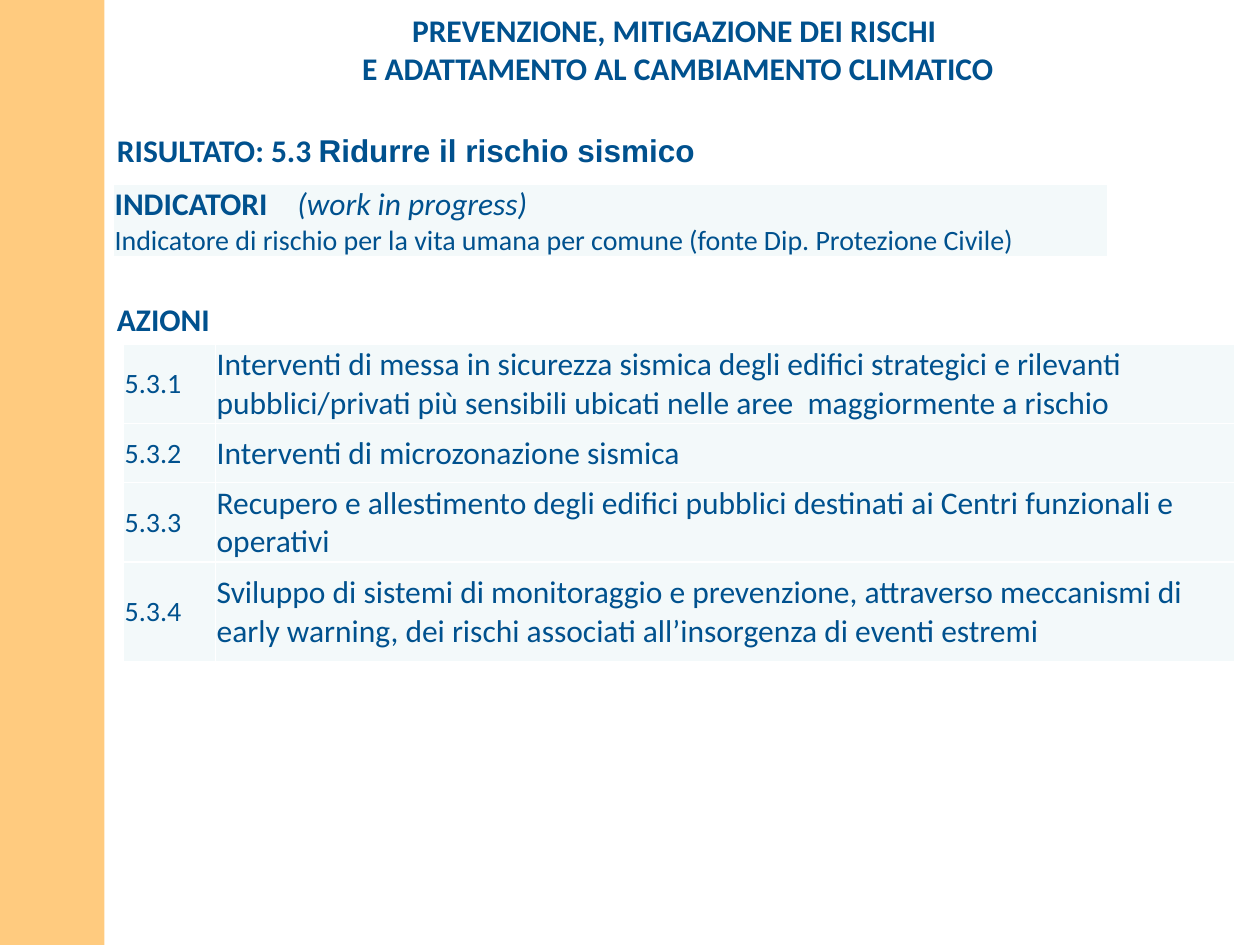
from pptx import Presentation
from pptx.dml.color import RGBColor
from pptx.enum.shapes import MSO_SHAPE
from pptx.enum.text import MSO_ANCHOR as ANCHOR, MSO_AUTO_SIZE as AUTO, PP_ALIGN as ALIGN
from pptx.oxml.ns import qn
from pptx.util import Inches, Pt
from lxml import etree

BLUE = RGBColor(0x00, 0x51, 0x8E)
ORANGE = RGBColor(0xFF, 0x99, 0x00)
PALE = RGBColor(0xF3, 0xF9, 0xFA)
WHITE = RGBColor(0xFF, 0xFF, 0xFF)

TITLE = ["PREVENZIONE, MITIGAZIONE DEI RISCHI ",
         "E ADATTAMENTO AL CAMBIAMENTO CLIMATICO"]
INDICATOR = "Indicatore di rischio per la vita umana per comune (fonte Dip. Protezione Civile)"
ACTIONS = [
    ("5.3.1", "Interventi di messa in sicurezza sismica degli edifici strategici e rilevanti "
              "pubblici/privati più sensibili ubicati nelle aree  maggiormente a rischio"),
    ("5.3.2", "Interventi di microzonazione sismica"),
    ("5.3.3", "Recupero e allestimento degli edifici pubblici destinati ai Centri funzionali "
              "e operativi"),
    ("5.3.4", "Sviluppo di sistemi di monitoraggio e prevenzione, attraverso meccanismi di "
              "early warning, dei rischi associati all’insorgenza di eventi estremi"),
]


class SlideBuilder:
    font = "Calibri"
    color = BLUE

    def __init__(self, slide):
        self.slide = slide

    def style(self, font, size=18, bold=False, name=None):
        font.name = name or self.font
        font.size = Pt(size)
        font.bold = bold
        font.color.rgb = self.color

    def bar(self, x, y, w, h, color, alpha):
        sp = self.slide.shapes.add_shape(
            MSO_SHAPE.RECTANGLE, Inches(x), Inches(y), Inches(w), Inches(h))
        sp.shadow.inherit = False
        sp.fill.solid()
        sp.fill.fore_color.rgb = color
        sp.line.fill.background()
        clr = sp.fill._xPr.find(qn("a:solidFill"))[0]
        etree.SubElement(clr, qn("a:alpha")).set("val", str(alpha * 1000))

    def title(self, x, y, w, h, lines):
        sp = self.slide.shapes.title
        sp.left, sp.top, sp.width, sp.height = map(Inches, (x, y, w, h))
        sp.fill.solid()
        sp.fill.fore_color.rgb = WHITE
        tf = sp.text_frame
        tf.auto_size = AUTO.NONE
        tf.vertical_anchor = ANCHOR.MIDDLE
        tf.margin_left = tf.margin_right = tf.margin_top = tf.margin_bottom = 0
        tf.text = "\n".join(lines)
        for p in tf.paragraphs:
            p.alignment = ALIGN.CENTER
            self.style(p.font, bold=True)

    def heading(self, x, y, w, h, *runs):
        """Each run is a (text, font name) pair."""
        tf = self.slide.shapes.add_textbox(
            Inches(x), Inches(y), Inches(w), Inches(h)).text_frame
        tf.word_wrap = True
        tf.auto_size = AUTO.SHAPE_TO_FIT_TEXT
        for text, name in runs:
            r = tf.paragraphs[0].add_run()
            r.text = text
            self.style(r.font, bold=True, name=name)

    def table(self, x, y, widths, heights):
        frame = self.slide.shapes.add_table(
            len(heights), len(widths), Inches(x), Inches(y),
            Inches(sum(widths)), Inches(sum(heights)))
        table = frame.table
        table.first_row = table.horz_banding = False
        for col, w in zip(table.columns, widths):
            col.width = Inches(w)
        for row, h in zip(table.rows, heights):
            row.height = Inches(h)
        for cell in table.iter_cells():
            self.format_cell(cell)
        return table

    def format_cell(self, cell):
        cell.vertical_anchor = ANCHOR.MIDDLE
        cell.margin_left = cell.margin_right = cell.margin_top = Inches(0.01)
        cell.margin_bottom = 0
        tc_pr = cell._tc.get_or_add_tcPr()
        for side in ("lnL", "lnR", "lnT", "lnB"):
            ln = etree.SubElement(tc_pr, qn("a:" + side), w=str(Pt(1)))
            fill = etree.SubElement(ln, qn("a:solidFill"))
            etree.SubElement(fill, qn("a:srgbClr"), val=str(WHITE))
        cell.fill.solid()
        cell.fill.fore_color.rgb = PALE

    def tab_stop(self, p, pos):
        tabs = etree.SubElement(p._p.get_or_add_pPr(), qn("a:tabLst"))
        etree.SubElement(tabs, qn("a:tab"), pos=str(Inches(pos)), algn="l")


def main():
    prs = Presentation()
    prs.slide_width, prs.slide_height = Inches(10), Inches(7.5)
    s = SlideBuilder(prs.slides.add_slide(prs.slide_layouts[5]))

    # Side bar and title
    s.bar(0, 0, 0.83, 7.5, ORANGE, 50)
    s.title(0.83, 0.05, 9.1, 0.67, TITLE)

    # Expected result
    s.heading(0.83, 0.99, 9.06, 0.4,
              ("RISULTATO: 5.3 ", "Calibri"), ("Ridurre il rischio sismico", "Arial"))

    # Indicators
    tf = s.table(0.9, 1.46, [7.89], [0.58]).cell(0, 0).text_frame
    p = tf.paragraphs[0]
    s.tab_stop(p, 1.45)
    for text, is_label in (("INDICATORI\t", True), ("(work in progress)", False)):
        r = p.add_run()
        r.text = text
        s.style(r.font, bold=is_label)
        r.font.italic = not is_label
    p = tf.add_paragraph()
    p.text = INDICATOR
    s.style(p.font, 16)

    # Actions
    s.heading(0.83, 2.33, 1.1, 0.4, ("AZIONI", "Calibri"))
    table = s.table(0.98, 2.73, [0.73, 8.09], [0.63, 0.47, 0.63, 0.79])
    for row, texts in zip(table.rows, ACTIONS):
        for cell, text, size in zip(row.cells, texts, (16, 18)):
            p = cell.text_frame.paragraphs[0]
            p.text = text
            s.style(p.font, size)

    prs.save("out.pptx")


if __name__ == "__main__":
    main()
